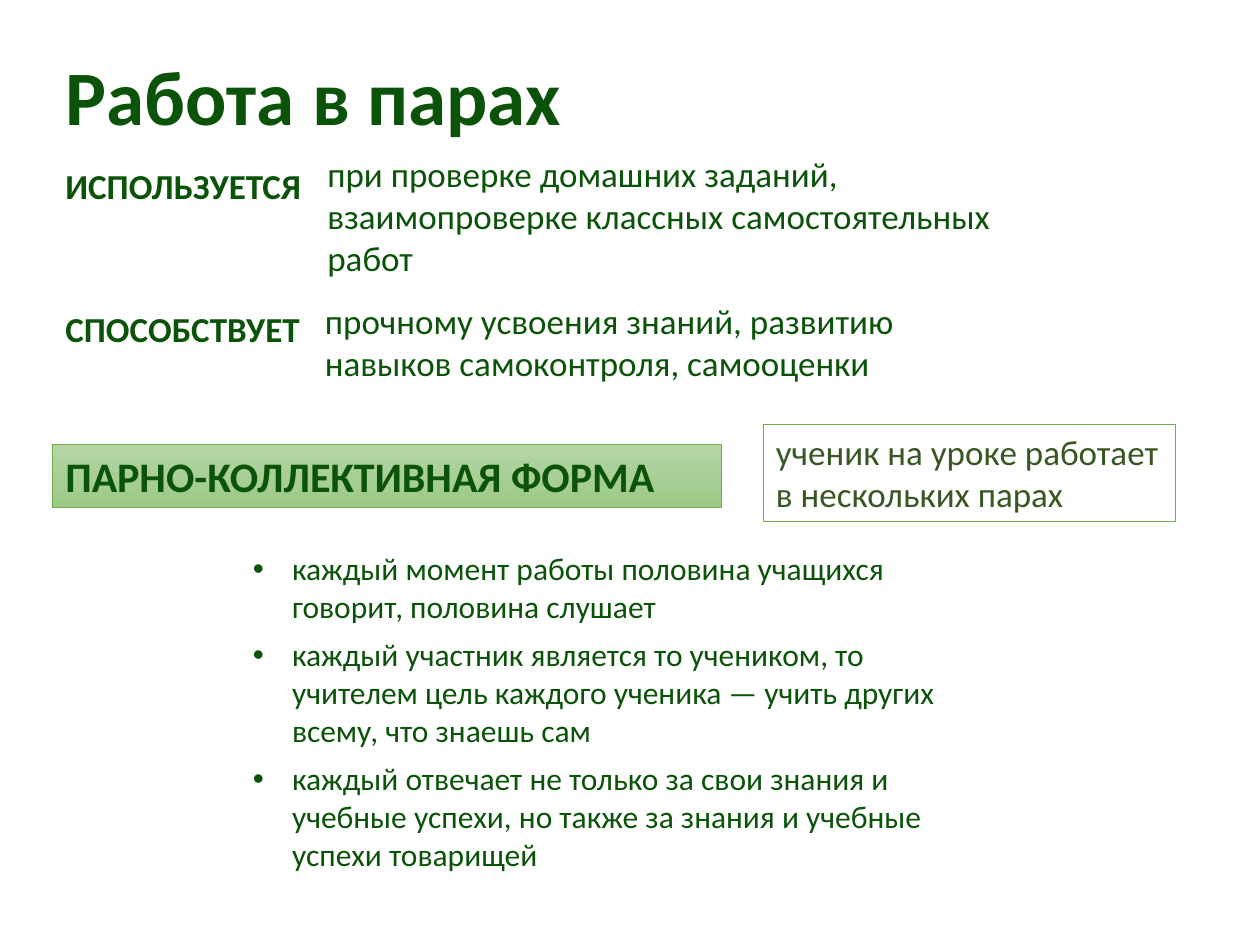
from dataclasses import dataclass

from lxml import etree
from pptx import Presentation
from pptx.dml.color import RGBColor
from pptx.enum.shapes import MSO_SHAPE
from pptx.enum.text import MSO_ANCHOR, MSO_AUTO_SIZE, PP_ALIGN
from pptx.oxml.ns import qn
from pptx.util import Inches, Pt

RECTANGLE = MSO_SHAPE.RECTANGLE
TOP, MIDDLE = MSO_ANCHOR.TOP, MSO_ANCHOR.MIDDLE
NO_FIT, GROW = MSO_AUTO_SIZE.NONE, MSO_AUTO_SIZE.SHAPE_TO_FIT_TEXT
LEFT = PP_ALIGN.LEFT
TITLE_ONLY = 5
SLIDE_WIDTH, SLIDE_HEIGHT = Inches(10), Inches(7.5)
COLUMNS, ROWS = 100, 75
MARGIN = 4.2


@dataclass(frozen=True)
class Theme:
    """Colours and type sizes of the slide."""
    font: str = "Calibri"
    ink: str = "0B5309"
    note_ink: str = "385723"
    outline: str = "70AD47"
    paper: str = "FFFFFF"
    band: tuple = ("B5D5A7", "9CC987")
    title: int = 44
    heading: int = 24
    body: int = 20
    points: int = 18


THEME = Theme()


def apply(target, formats):
    """Set each named format value on the target."""
    for name, value in formats.items():
        setattr(target, name, value)


def cells(column, row, width, height):
    """Turn grid units into left, top, width and height."""
    across, down = SLIDE_WIDTH / COLUMNS, SLIDE_HEIGHT / ROWS
    return (round(column * across), round(row * down),
            round(width * across), round(height * down))


def write(holder, paragraphs, size, bold=False, ink=THEME.ink,
          anchor=TOP, fit=GROW, bulleted=False, spacing=None):
    """Fill a holder with formatted paragraphs."""
    frame = holder.text_frame
    frame.text = "\n".join(paragraphs)
    apply(frame, {"word_wrap": True, "auto_size": fit, "vertical_anchor": anchor})
    for paragraph in frame.paragraphs:
        if bulleted:
            add_bullet(paragraph)
        apply(paragraph, {"alignment": LEFT, "line_spacing": spacing})
        apply(paragraph.font, {"name": THEME.font, "size": Pt(size), "bold": bold})
        paragraph.font.color.rgb = RGBColor.from_string(ink)


def add_bullet(paragraph):
    """Give a paragraph a hanging bullet and space after it."""
    properties = paragraph._p.get_or_add_pPr()
    properties.set("marL", str(Inches(0.31)))
    properties.set("indent", str(-Inches(0.31)))
    etree.SubElement(properties, qn("a:buFont")).set("typeface", "Arial")
    etree.SubElement(properties, qn("a:buChar")).set("char", "•")
    paragraph.space_after = Pt(6)


def add_title(slide, text, area):
    """Move and format the title placeholder."""
    title = slide.shapes.title
    apply(title, dict(zip(("left", "top", "width", "height"), cells(*area))))
    write(title, [text], THEME.title, bold=True, anchor=MIDDLE, fit=NO_FIT, spacing=0.9)


def add_text(slide, paragraphs, area, size=THEME.body, **formats):
    """Add a plain text box."""
    write(slide.shapes.add_textbox(*cells(*area)), paragraphs, size, **formats)


def add_panel(slide, text, area, colours, line_width, size, **formats):
    """Add an outlined rectangle with a solid or two-colour fill."""
    panel = slide.shapes.add_shape(RECTANGLE, *cells(*area))
    panel.shadow.inherit = False
    if len(colours) == 1:
        panel.fill.solid()
        panel.fill.fore_color.rgb = RGBColor.from_string(colours[0])
    else:
        panel.fill.gradient()
        panel.fill.gradient_angle = 270
        for stop, colour in zip(panel.fill.gradient_stops, colours):
            stop.color.rgb = RGBColor.from_string(colour)
    panel.line.color.rgb = RGBColor.from_string(THEME.outline)
    panel.line.width = Pt(line_width)
    write(panel, [text], size, **formats)


def main():
    """Build the slide and save it."""
    presentation = Presentation()
    apply(presentation, {"slide_width": SLIDE_WIDTH, "slide_height": SLIDE_HEIGHT})
    slide = presentation.slides.add_slide(presentation.slide_layouts[TITLE_ONLY])

    add_title(slide, "Работа в парах", (MARGIN, 0.7, 45.2, 14.5))
    uses = (
        ("ИСПОЛЬЗУЕТСЯ", (MARGIN, 12.6, 20.8, 4.4),
         "при проверке домашних заданий, взаимопроверке классных самостоятельных работ",
         (25, 11.6, 55, 11.1)),
        ("СПОСОБСТВУЕТ", (MARGIN, 23.9, 21.7, 4.4),
         "прочному усвоения знаний, развитию навыков самоконтроля, самооценки",
         (24.8, 23.3, 52.8, 7.7)),
    )
    for label, label_area, purpose, purpose_area in uses:
        add_text(slide, [purpose], purpose_area)
        add_text(slide, [label], label_area, bold=True)

    add_panel(slide, "ПАРНО-КОЛЛЕКТИВНАЯ ФОРМА ", (MARGIN, 35.3, 53.1, 5),
              THEME.band, 0.5, THEME.heading, bold=True)
    add_panel(slide, "ученик на уроке работает в нескольких парах",
              (60.6, 33.7, 32.7, 7.7), (THEME.paper,), 1, THEME.body, ink=THEME.note_ink)
    principles = [
        "каждый момент работы половина учащихся говорит, половина слушает",
        "каждый участник является то учеником, то учителем цель каждого ученика"
        " — учить других всему, что знаешь сам",
        "каждый отвечает не только за свои знания и учебные успехи,"
        " но также за знания и учебные успехи товарищей",
    ]
    add_text(slide, principles, (19.1, 43.1, 60.6, 26.9), THEME.points, bulleted=True)
    presentation.save("out.pptx")


if __name__ == "__main__":
    main()
